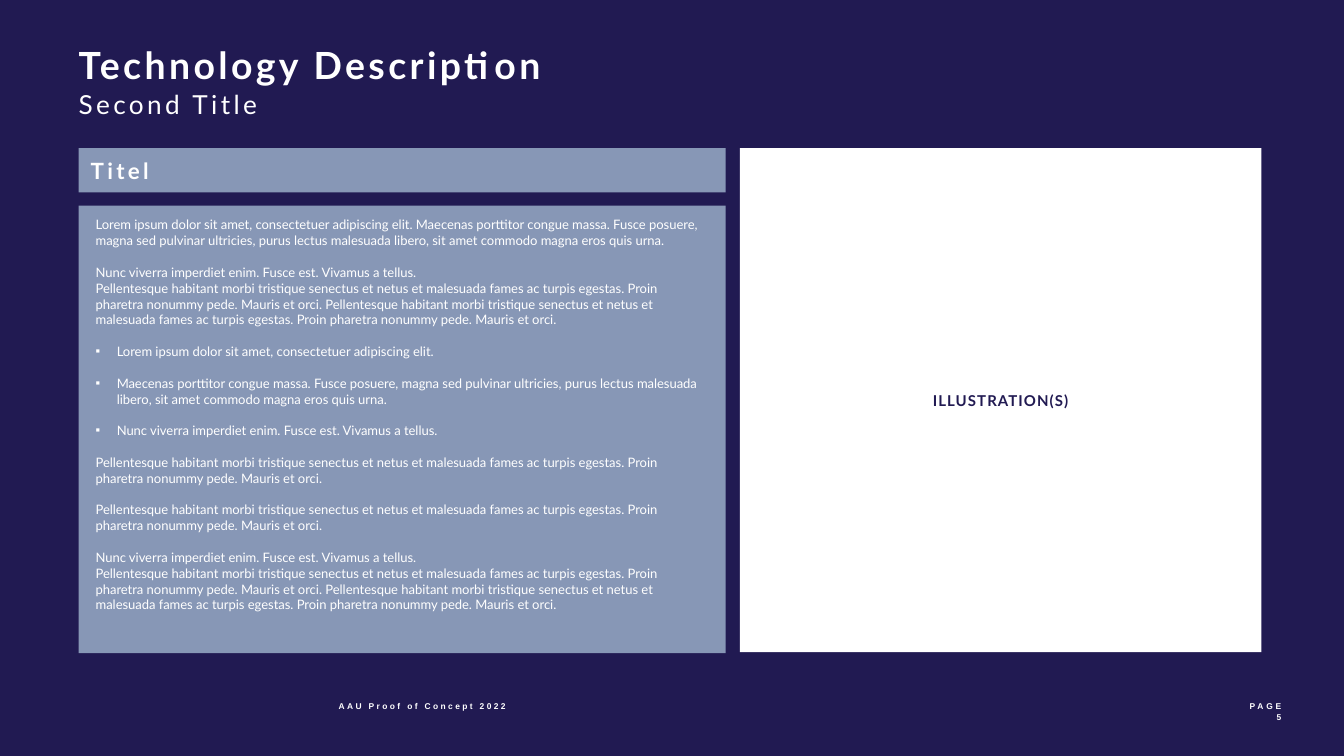
from dataclasses import dataclass

from lxml import etree
from pptx import Presentation, util as u
from pptx.dml.color import RGBColor
from pptx.enum import shapes, text
from pptx.oxml.ns import qn

NAVY, STEEL, WHITE = "211A52", "8797B6", "FFFFFF"
LEFT, RIGHT = text.PP_ALIGN.LEFT, text.PP_ALIGN.RIGHT
CENTER = text.PP_ALIGN.CENTER
MARGIN, MAIN_WIDTH, PANEL_TOP, FOOTER_TOP = 5.85, 48.15, 19.6, 92.8
LINE = u.Pt(11.3)
INDENT = u.Inches(0.21)

LOREM = "Lorem ipsum dolor sit amet, consectetuer adipiscing elit."
MAECENAS = ("Maecenas porttitor congue massa. Fusce posuere, magna sed pulvinar "
            "ultricies, purus lectus malesuada libero, sit amet commodo magna "
            "eros quis urna.")
NUNC = "Nunc viverra imperdiet enim. Fusce est. Vivamus a tellus."
HABITANT = ("Pellentesque habitant morbi tristique senectus et netus et malesuada "
            "fames ac turpis egestas. Proin pharetra nonummy pede. Mauris et orci.")


@dataclass(frozen=True)
class Box:
    """Left, top, width and height in percent of the slide."""
    x: float
    y: float
    w: float
    h: float


@dataclass(frozen=True)
class Para:
    words: str
    gap: bool = False
    bullet: bool = False


@dataclass(frozen=True)
class Style:
    size: float
    font: str = "Lato"
    bold: bool = True
    color: str = WHITE
    tracking: float = 0
    align: text.PP_ALIGN = LEFT


@dataclass(frozen=True)
class Panel:
    box: Box
    fill: str


@dataclass(frozen=True)
class Label:
    box: Box
    lines: tuple[str, ...]
    style: Style


PANELS = (
    Panel(Box(MARGIN, PANEL_TOP, MAIN_WIDTH, 5.87), STEEL),
    Panel(Box(MARGIN, 27.2, MAIN_WIDTH, 59.2), STEEL),
    Panel(Box(55.05, PANEL_TOP, 38.8, 66.67), WHITE),
)
LABELS = (
    Label(Box(MARGIN, 5.6, 40.8, 6), ("Technology Description",),
          Style(26.7, tracking=2.4)),
    Label(Box(MARGIN, 11.73, 21.7, 4.13), ("Second Title",),
          Style(18.7, bold=False, tracking=2.4)),
    Label(Box(6.75, 20.8, 46.65, 3.6), ("Titel",), Style(16, tracking=2.4)),
    Label(Box(69.17, 51.73, 10.58, 2.4), ("ILLUSTRATION(S)",),
          Style(10.7, color=NAVY, tracking=0.8, align=CENTER)),
    Label(Box(25.2, FOOTER_TOP, 14.93, 4.13), ("AAU Proof of Concept 2022",),
          Style(6, "Arial", tracking=1.7)),
    Label(Box(83.7, FOOTER_TOP, 11.63, 4.13), ("PAGE", "5"),
          Style(6, "Arial", tracking=2, align=RIGHT)),
)
BODY_BOX = Box(6.38, 28, 47.05, 54.8)
BODY_STYLE = Style(9.3, bold=False)
BODY = (
    Para(f"{LOREM} {MAECENAS}"),
    Para(NUNC, gap=True),
    Para(f"{HABITANT} {HABITANT}"),
    Para(LOREM, gap=True, bullet=True),
    Para(MAECENAS, gap=True, bullet=True),
    Para(NUNC, gap=True, bullet=True),
    Para(HABITANT, gap=True),
    Para(HABITANT, gap=True),
    Para(NUNC, gap=True),
    Para(f"{HABITANT} {HABITANT}"),
)

prs = Presentation()
prs.slide_width, prs.slide_height = u.Inches(13.33), u.Inches(7.5)


def rgb(color: str) -> RGBColor:
    return RGBColor.from_string(color)


def place(box: Box) -> tuple[int, int, int, int]:
    """Turn percentages into slide lengths."""
    width, height = prs.slide_width / 100, prs.slide_height / 100
    return (round(box.x * width), round(box.y * height),
            round(box.w * width), round(box.h * height))


def add_panel(s, panel: Panel) -> None:
    sp = s.shapes.add_shape(shapes.MSO_SHAPE.RECTANGLE, *place(panel.box))
    sp.shadow.inherit = False
    sp.fill.solid()
    sp.fill.fore_color.rgb = rgb(panel.fill)
    sp.line.fill.background()


def add_frame(s, box: Box):
    tf = s.shapes.add_textbox(*place(box)).text_frame
    tf.word_wrap = True
    return tf


def next_paragraph(tf, index: int):
    return tf.add_paragraph() if index else tf.paragraphs[0]


def add_run(p, words: str, style: Style) -> None:
    p.alignment = style.align
    r = p.add_run()
    r.text = words
    r.font.size = u.Pt(style.size)
    r.font.name = style.font
    r.font.bold = style.bold
    r.font.color.rgb = rgb(style.color)
    if style.tracking:
        r._r.get_or_add_rPr().set("spc", str(round(style.tracking * 100)))


def add_bullet(p) -> None:
    ppr = p._p.get_or_add_pPr()
    ppr.set("marL", str(INDENT))
    ppr.set("indent", str(-INDENT))
    etree.SubElement(ppr, qn("a:buFont"), typeface="Arial")
    etree.SubElement(ppr, qn("a:buChar"), char="▪")


def add_label(s, label: Label) -> None:
    tf = add_frame(s, label.box)
    tf.margin_left = tf.margin_right = tf.margin_top = tf.margin_bottom = 0
    for i, line in enumerate(label.lines):
        add_run(next_paragraph(tf, i), line, label.style)


def add_body(s) -> None:
    tf = add_frame(s, BODY_BOX)
    for i, para in enumerate(BODY):
        p = next_paragraph(tf, i)
        if para.bullet:
            add_bullet(p)
        p.line_spacing = LINE
        if para.gap:
            p.space_before = LINE
        add_run(p, para.words, BODY_STYLE)


def main() -> None:
    s = prs.slides.add_slide(prs.slide_layouts[6])
    s.background.fill.solid()
    s.background.fill.fore_color.rgb = rgb(NAVY)
    for panel in PANELS:
        add_panel(s, panel)
    for label in LABELS:
        add_label(s, label)
    add_body(s)
    prs.save("out.pptx")


if __name__ == "__main__":
    main()
